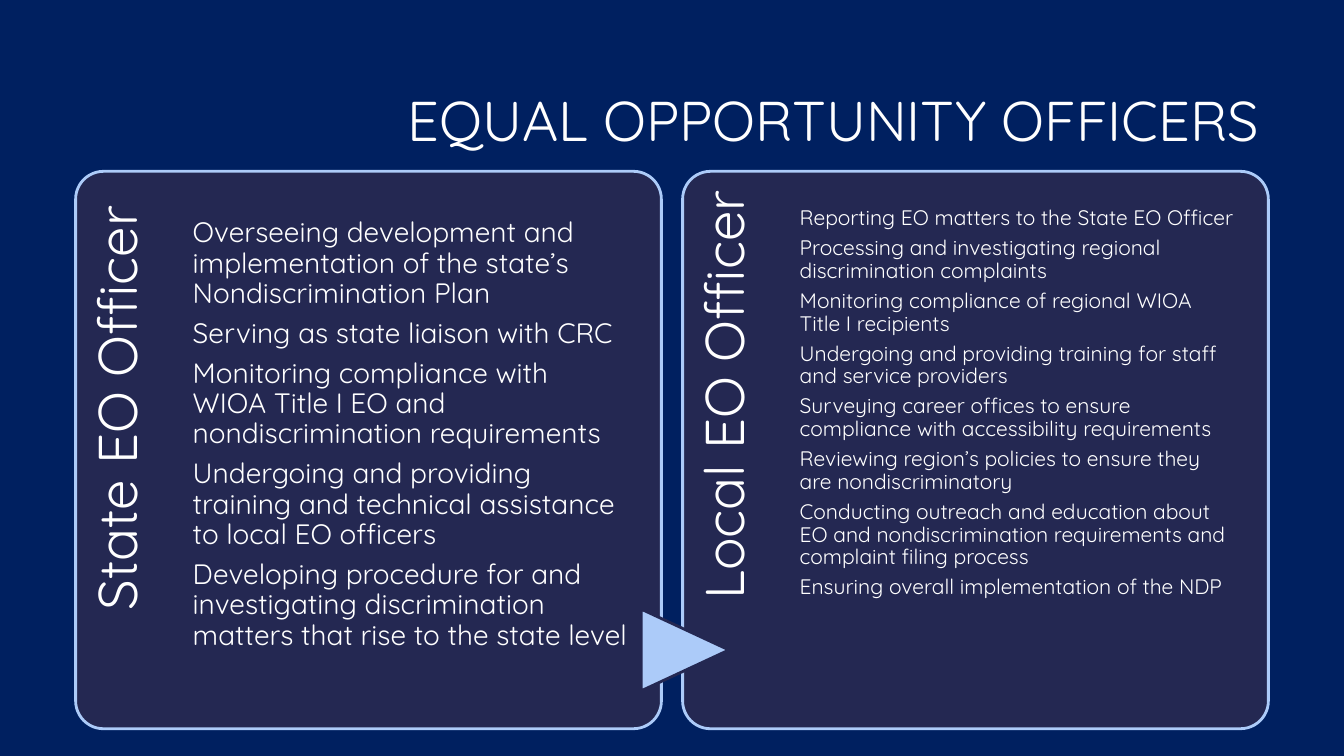
from dataclasses import dataclass

from pptx import Presentation
from pptx.dml.color import RGBColor
from pptx.enum.shapes import MSO_SHAPE
from pptx.enum.text import MSO_ANCHOR, PP_ALIGN
from pptx.util import Inches, Pt

ROUND = MSO_SHAPE.ROUNDED_RECTANGLE
POINTER = MSO_SHAPE.FLOWCHART_EXTRACT
TOP, MIDDLE = MSO_ANCHOR.TOP, MSO_ANCHOR.MIDDLE
LEFT, RIGHT = PP_ALIGN.LEFT, PP_ALIGN.RIGHT


@dataclass(frozen=True)
class Theme:
    back: str = "002060"
    card: str = "242852"
    edge: str = "ACCBF9"
    ink: str = "FFFFFF"
    font: str = "Quicksand"
    title: int = 40
    head: int = 39
    line: int = 2


THEME = Theme()
WIDE, HIGH = 13.33, 7.5
MARGIN, GAP = 0.75, 0.21
CARD_TOP, CARD_HIGH = 1.7, 5.53
CARD_WIDE = (WIDE - 2 * MARGIN - GAP) / 2

# heading, heading inset, list size, list inset, space after, duties
CARDS = [
    ("State EO Officer", 0.34, 20, 0.47, 7, [
        "Overseeing development and implementation of the state’s Nondiscrimination Plan",
        "Serving as state liaison with CRC",
        "Monitoring compliance with WIOA Title I EO and nondiscrimination requirements",
        "Undergoing and providing training and technical assistance to local EO officers",
        "Developing procedure for and investigating discrimination matters that rise to the state level",
    ]),
    ("Local EO Officer", 0.19, 15, 0.36, 5.25, [
        "Reporting EO matters to the State EO Officer",
        "Processing and investigating regional discrimination complaints",
        "Monitoring compliance of regional WIOA Title I recipients",
        "Undergoing and providing training for staff and service providers",
        "Surveying career offices to ensure compliance with accessibility requirements",
        "Reviewing region’s policies to ensure they are nondiscriminatory",
        "Conducting outreach and education about EO and nondiscrimination requirements "
        "and complaint filing process",
        "Ensuring overall implementation of the NDP",
    ]),
]


def rgb(code):
    return RGBColor.from_string(code)


def write(shape, lines, size, align=LEFT, anchor=TOP, inset=(0, 0, 0, 0), after=0):
    """Fill a shape with paragraphs; inset is left, top, right, bottom."""
    frame = shape.text_frame
    frame.word_wrap = True
    frame.vertical_anchor = anchor
    (frame.margin_left, frame.margin_top,
     frame.margin_right, frame.margin_bottom) = map(Inches, inset)
    for i, line in enumerate(lines):
        para = frame.add_paragraph() if i else frame.paragraphs[0]
        para.alignment = align
        para.line_spacing = 0.9
        para.space_before = Pt(0)
        para.space_after = Pt(after)
        run = para.add_run()
        run.text = line
        run.font.name = THEME.font
        run.font.size = Pt(size)
        run.font.color.rgb = rgb(THEME.ink)


def draw(slide, kind, box, fill, line):
    shape = slide.shapes.add_shape(kind, *map(Inches, box))
    shape.shadow.inherit = False
    shape.fill.solid()
    shape.fill.fore_color.rgb = rgb(fill)
    shape.line.color.rgb = rgb(line)
    shape.line.width = Pt(THEME.line)
    return shape


def add_title(slide, text, box):
    title = slide.shapes.title
    title.left, title.top, title.width, title.height = map(Inches, box)
    write(title, [text], THEME.title, RIGHT, MIDDLE, (0.1, 0.05, 0.1, 0.7))


def add_card(slide, box, head, pad, size, drop, after, duties):
    """Rounded card with an upright heading at its left and a list beside it."""
    x, y, w, h = box
    card = draw(slide, ROUND, box, THEME.card, THEME.edge)
    card.adjustments[0] = 0.05
    band, span = 0.2 * w, 0.82 * h
    label = slide.shapes.add_textbox(*map(Inches, (
        x + (band - span) / 2, y + (span - band) / 2, span, band)))
    label.rotation = 270
    write(label, [head], THEME.head, RIGHT, inset=(0, 0.15, pad, 0))
    body = slide.shapes.add_textbox(*map(Inches, (x + band, y, 0.745 * w, h)))
    write(body, duties, size, inset=(0, drop, 0, 0), after=after)


def add_pointer(slide, box):
    """Triangle turned to point right, centred on the gap in the box."""
    x, y, w, h = box
    wide, high = 0.81, 0.87
    shape = draw(slide, POINTER, (x + (w - wide) / 2 + 0.13, y + 0.78 * h, wide, high),
                 THEME.edge, THEME.card)
    shape.rotation = 90


def main():
    deck = Presentation()
    deck.slide_width, deck.slide_height = Inches(WIDE), Inches(HIGH)
    slide = deck.slides.add_slide(deck.slide_layouts[5])
    slide.background.fill.solid()
    slide.background.fill.fore_color.rgb = rgb(THEME.back)
    add_title(slide, "EQUAL OPPORTUNITY OFFICERS", (3.17, 0.84, 9.42, 1.41))
    for i, card in enumerate(CARDS):
        left = MARGIN + i * (CARD_WIDE + GAP)
        add_card(slide, (left, CARD_TOP, CARD_WIDE, CARD_HIGH), *card)
    add_pointer(slide, (MARGIN, CARD_TOP, WIDE - 2 * MARGIN, CARD_HIGH))
    deck.save("out.pptx")


if __name__ == "__main__":
    main()
